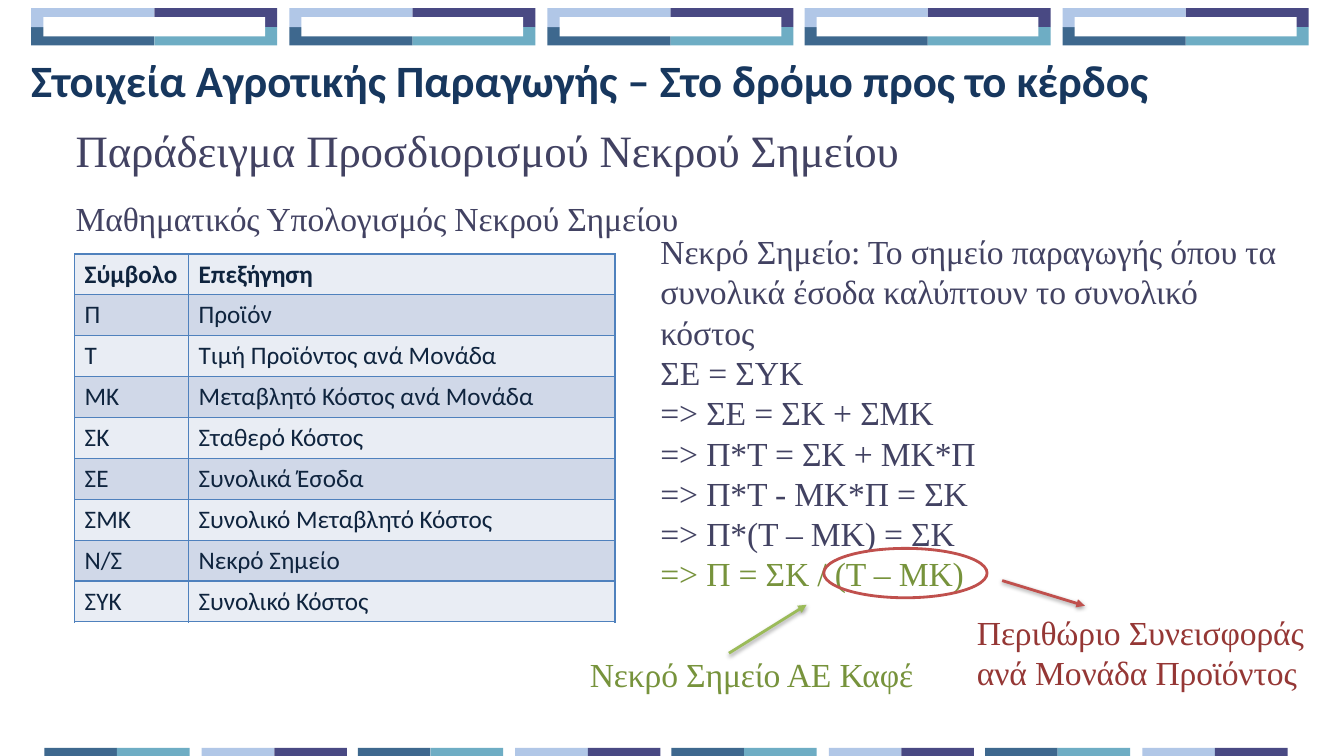
from lxml.etree import SubElement
from pptx import Presentation
from pptx.dml.color import RGBColor
from pptx.enum.shapes import MSO_CONNECTOR as Connector, MSO_SHAPE as Preset
from pptx.enum.text import MSO_ANCHOR as Anchor, MSO_AUTO_SIZE as AutoSize, PP_ALIGN as Align
from pptx.oxml import parse_xml
from pptx.oxml.ns import nsdecls, qn
from pptx.util import Pt

PX = 9144
WIDTH, HEIGHT = 1333, 750
SERIF, SANS = "Times New Roman", "Calibri"
COLORS = {
    "white": "FFFFFF", "purple": "494983", "aqua": "6EADC4", "steel": "3E688E", "sky": "B1C7E7",
    "title": "17375E", "body": "424262", "cell": "0F243E", "border": "4F81BD",
    "light": "E9EDF4", "dark": "D0D8E8", "red": "C0504D", "maroon": "953735",
    "green": "9BBB59", "olive": "77933C",
}
SYMBOLS = [
    ("Σύμβολο", "Επεξήγηση"),
    ("Π", "Προϊόν"),
    ("Τ", "Τιμή Προϊόντος ανά Μονάδα"),
    ("ΜΚ", "Μεταβλητό Κόστος ανά Μονάδα"),
    ("ΣΚ", "Σταθερό Κόστος"),
    ("ΣΕ", "Συνολικά Έσοδα"),
    ("ΣΜΚ", "Συνολικό Μεταβλητό Κόστος"),
    ("Ν/Σ", "Νεκρό Σημείο"),
    ("ΣΥΚ", "Συνολικό Κόστος"),
]
STEPS = [
    "Νεκρό Σημείο: Το σημείο παραγωγής όπου τα συνολικά έσοδα καλύπτουν το συνολικό κόστος",
    "ΣΕ = ΣΥΚ",
    "=> ΣΕ = ΣΚ + ΣΜΚ",
    "=> Π*Τ = ΣΚ + ΜΚ*Π",
    "=> Π*Τ - ΜΚ*Π = ΣΚ",
    "=> Π*(Τ – ΜΚ) = ΣΚ",
    "=> Π = ΣΚ / (Τ – ΜΚ)",
]


def rgb(name):
    return RGBColor.from_string(COLORS[name])


def emu(*lengths):
    return [length * PX for length in lengths]


def style_run(span, size, color, font, bold=False):
    span.font.size = Pt(size)
    span.font.name = font
    span.font.bold = bold
    span.font.color.rgb = rgb(color)


def add_bar(page, box, color):
    bar = page.shapes.add_shape(Preset.RECTANGLE, *emu(*box))
    bar.shadow.inherit = False
    bar.fill.solid()
    bar.fill.fore_color.rgb = rgb(color)
    bar.line.fill.background()


def add_top_band(page, box):
    left, top, width, height = box
    half, upper = 122, 19
    frame = 2 * half
    pitch = (width - frame) / 4
    for index in range(5):
        x = left + round(index * pitch)
        add_bar(page, (x + half, top, half, upper), "purple")
        add_bar(page, (x + half, top + upper, half, height - upper), "aqua")
        add_bar(page, (x, top + upper, half, height - upper), "steel")
        add_bar(page, (x, top, half, upper), "sky")
        add_bar(page, (x + 12, top + 9, frame - 24, upper), "white")


def add_bottom_band(page, box):
    left, top, width, height = box
    half = 72
    pitch = (width - 2 * half) / 7
    for index in range(8):
        x = left + round(index * pitch)
        pair = ("sky", "purple") if index % 2 else ("steel", "aqua")
        for side, color in enumerate(pair):
            add_bar(page, (x + side * half, top, half, height), color)


def add_title(page, box, text):
    title = page.shapes.title
    title.left, title.top, title.width, title.height = emu(*box)
    frame = title.text_frame
    frame.text = text
    frame.word_wrap = True
    frame.auto_size = AutoSize.SHAPE_TO_FIT_TEXT
    frame.vertical_anchor = Anchor.TOP
    frame.margin_left = frame.margin_right = 10 * PX
    frame.margin_top = frame.margin_bottom = 5 * PX
    para = frame.paragraphs[0]
    para.alignment = Align.LEFT
    style_run(para.runs[0], 32, "title", SANS, True)


def add_text(page, box, lines, size=24, color="body", spacing=1):
    frame = page.shapes.add_textbox(*emu(*box)).text_frame
    frame.word_wrap = True
    frame.auto_size = AutoSize.SHAPE_TO_FIT_TEXT
    frame.margin_left = PX
    frame.margin_right = frame.margin_top = frame.margin_bottom = 0
    frame.text = "\n".join(lines)
    for para in frame.paragraphs:
        para.line_spacing = spacing
        for span in para.runs:
            style_run(span, size, color, SERIF)
            span._r.get_or_add_rPr().set("spc", "-10")
    return frame


def add_cell_borders(cell):
    properties = cell._tc.get_or_add_tcPr()
    for side in ("lnL", "lnR", "lnT", "lnB"):
        line = SubElement(properties, qn(f"a:{side}"), w=str(Pt(1)))
        fill = SubElement(line, qn("a:solidFill"))
        SubElement(fill, qn("a:srgbClr"), val=COLORS["border"])


def add_symbol_table(page, box):
    table = page.shapes.add_table(len(SYMBOLS), 2, *emu(*box)).table
    table.columns[0].width = 113 * PX
    table.columns[1].width = (box[2] - 113) * PX
    for row, texts in enumerate(SYMBOLS):
        for column, text in enumerate(texts):
            cell = table.cell(row, column)
            add_cell_borders(cell)
            cell.fill.solid()
            cell.fill.fore_color.rgb = rgb("dark" if row % 2 else "light")
            cell.text_frame.text = text
            style_run(cell.text_frame.paragraphs[0].runs[0], 18, "cell", SANS, row == 0)


def add_arrow(page, ends, color):
    arrow = page.shapes.add_connector(Connector.STRAIGHT, *emu(*ends))
    arrow.line.color.rgb = rgb(color)
    arrow.line.width = Pt(2)
    SubElement(arrow.line._get_or_add_ln(), qn("a:tailEnd"), type="triangle")
    arrow._element.spPr.append(parse_xml(
        f'<a:effectLst {nsdecls("a")}>'
        '<a:outerShdw blurRad="40000" dist="20000" dir="5400000" rotWithShape="0">'
        '<a:srgbClr val="000000"><a:alpha val="38000"/></a:srgbClr>'
        '</a:outerShdw></a:effectLst>'))


def add_derivation(page, box):
    left, top, width, height = box
    frame = add_text(page, box, STEPS)
    frame.paragraphs[-1].runs[0].font.color.rgb = rgb("olive")
    bottom = top + height
    margin_ring = page.shapes.add_shape(Preset.OVAL, *emu(left + 163, bottom - 49, 162, 49))
    margin_ring.shadow.inherit = False
    margin_ring.fill.background()
    margin_ring.line.color.rgb = rgb("red")
    margin_ring.line.width = Pt(2)
    add_arrow(page, (left + 69, bottom + 55, left + 146, bottom + 7), "green")
    add_text(page, (left - 70, bottom + 36, 346, 53), ["Νεκρό Σημείο ΑΕ Καφέ"],
             color="olive", spacing=1.5)
    add_arrow(page, (left + 340, bottom - 17, left + 422, bottom + 8), "red")
    add_text(page, (left + 314, bottom + 14, 346, 81),
             ["Περιθώριο Συνεισφοράς ανά Μονάδα Προϊόντος"], color="maroon")


def main():
    deck = Presentation()
    deck.slide_width, deck.slide_height = emu(WIDTH, HEIGHT)
    page = deck.slides.add_slide(deck.slide_layouts[5])
    add_top_band(page, (31, 8, 1267, 37))
    add_bottom_band(page, (44, 742, 1233, 8))
    add_title(page, (21, 47, 1229, 64), "Στοιχεία Αγροτικής Παραγωγής – Στο δρόμο προς το κέρδος")
    add_text(page, (74, 95, 1124, 71), ["Παράδειγμα Προσδιορισμού Νεκρού Σημείου"],
             size=32, spacing=1.5)
    add_text(page, (74, 176, 1124, 53), ["Μαθηματικός Υπολογισμός Νεκρού Σημείου"], spacing=1.5)
    add_symbol_table(page, (74, 252, 536, 365))
    add_derivation(page, (654, 229, 628, 364))
    deck.save("out.pptx")


if __name__ == "__main__":
    main()
